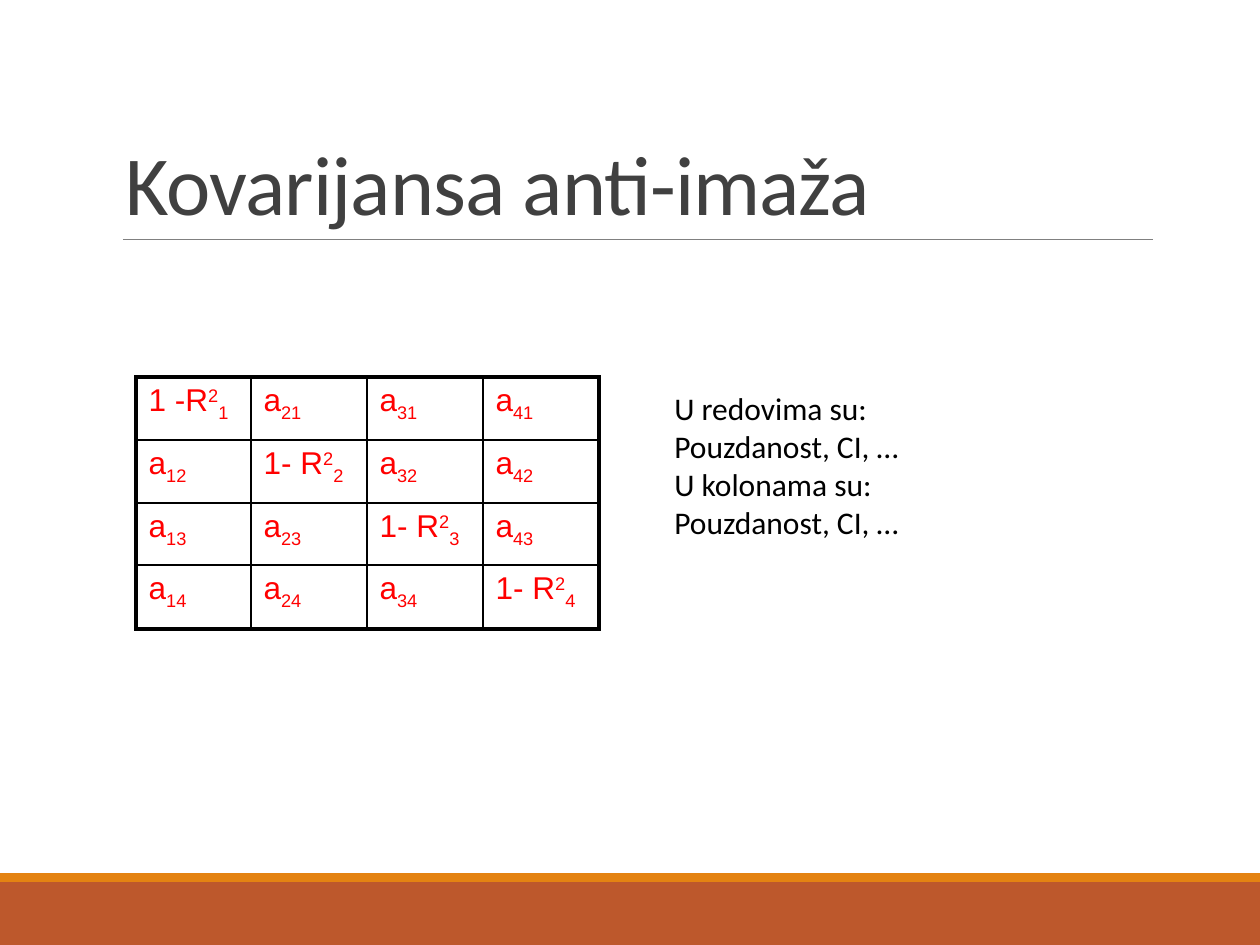
from lxml import etree
from pptx import Presentation
from pptx import util as u
from pptx.dml.color import RGBColor
from pptx.enum import shapes, text
from pptx.oxml.ns import qn

PX = 914400 / 126  # EMU per px
SIZE = 4  # order of the covariance matrix


def px(n):
    return u.Emu(round(n * PX))


def rgb(value):
    return RGBColor.from_string(value)


def apply(obj, values):
    for name, value in values.items():
        setattr(obj, name, value)


def matrix_runs(row, col):
    """Return (text, baseline) pairs for one matrix entry, counted from 1."""
    if row != col:
        return [("a", 0), (f"{col}{row}", -25000)]
    head = "1 -R" if row == 1 else "1- R"
    return [(head, 0), ("2", 30000), (str(row), -25000)]


class SlideBuilder:
    TITLE = {"name": "Calibri", "size": u.Pt(48)}
    BODY = {"name": "Calibri", "size": u.Pt(18)}
    CELL = {"name": "Arial", "size": u.Pt(18)}
    INK, TITLE_INK, CELL_INK = "000000", "404040", "FF0000"
    THIN, THICK = 1, 2.25

    def __init__(self, prs):
        self.s = prs.slides.add_slide(prs.slide_layouts[5])

    def font(self, r, values, color):
        apply(r.font, values)
        r.font.color.rgb = rgb(color)

    def band(self, x, y, w, h, color):
        sp = self.s.shapes.add_shape(
            shapes.MSO_SHAPE.RECTANGLE, px(x), px(y), px(w), px(h))
        sp.shadow.inherit = False
        sp.fill.solid()
        sp.fill.fore_color.rgb = rgb(color)
        sp.line.fill.background()

    def rule(self, x1, x2, y, color, width):
        ln = self.s.shapes.add_connector(
            shapes.MSO_CONNECTOR.STRAIGHT, px(x1), px(y), px(x2), px(y))
        ln.line.color.rgb = rgb(color)
        ln.line.width = u.Pt(width)
        etree.SubElement(ln._element.spPr, qn("a:effectLst"))

    def title(self, x, y, w, h, words):
        sp = self.s.shapes.title
        apply(sp, {"left": px(x), "top": px(y), "width": px(w), "height": px(h)})
        tf = sp.text_frame
        apply(tf, {"word_wrap": True, "auto_size": text.MSO_AUTO_SIZE.NONE,
                   "vertical_anchor": text.MSO_ANCHOR.BOTTOM})
        p = tf.paragraphs[0]
        apply(p, {"alignment": text.PP_ALIGN.LEFT, "line_spacing": 0.85})
        r = p.add_run()
        r.text = words
        self.font(r, self.TITLE, self.TITLE_INK)
        r.font._element.set("spc", "-50")

    def note(self, x, y, w, h, lines):
        tf = self.s.shapes.add_textbox(px(x), px(y), px(w), px(h)).text_frame
        apply(tf, {"word_wrap": True,
                   "auto_size": text.MSO_AUTO_SIZE.SHAPE_TO_FIT_TEXT})
        for i, line in enumerate(lines):
            p = tf.add_paragraph() if i else tf.paragraphs[0]
            r = p.add_run()
            r.text = line
            self.font(r, self.BODY, self.INK)

    def borders(self, cell, widths):
        """Draw the left, right, top and bottom borders of a cell."""
        tcPr = cell._tc.get_or_add_tcPr()
        for side, width in zip("LRTB", widths):
            ln = etree.SubElement(tcPr, qn(f"a:ln{side}"), w=str(u.Pt(width)))
            fill = etree.SubElement(ln, qn("a:solidFill"))
            etree.SubElement(fill, qn("a:srgbClr"), val=self.INK)

    def matrix(self, x, y, cols, rows):
        table = self.s.shapes.add_table(
            SIZE, SIZE, px(x), px(y), px(sum(cols)), px(sum(rows))).table
        apply(table, {"first_row": False, "horz_banding": False})
        for column, w in zip(table.columns, cols):
            column.width = px(w)
        for line, h in zip(table.rows, rows):
            line.height = px(h)
        for row in range(1, SIZE + 1):
            for col in range(1, SIZE + 1):
                cell = table.cell(row - 1, col - 1)
                outer = (col == 1, col == SIZE, row == 1, row == SIZE)
                self.borders(cell, [self.THICK if o else self.THIN for o in outer])
                cell.fill.background()
                p = cell.text_frame.paragraphs[0]
                for words, baseline in matrix_runs(row, col):
                    r = p.add_run()
                    r.text = words
                    self.font(r, self.CELL, self.CELL_INK)
                    if baseline:
                        r.font._element.set("baseline", str(baseline))


def main():
    prs = Presentation()
    apply(prs, {"slide_width": px(1260), "slide_height": px(945)})
    b = SlideBuilder(prs)
    b.band(0, 882, 1260, 63, "BD582C")
    b.band(0, 873, 1260, 9, "E48312")
    b.rule(123, 1153, 239, "808080", 0.5)
    b.title(113, 39, 1040, 200, "Kovarijansa anti-imaža")
    b.matrix(136, 377, [115, 116, 116, 116], [63, 63, 62, 64])
    b.note(662, 383, 378, 165, ["U redovima su:", "Pouzdanost, CI, …",
                                "U kolonama su:", "Pouzdanost, CI, …"])
    prs.save("out.pptx")


if __name__ == "__main__":
    main()
